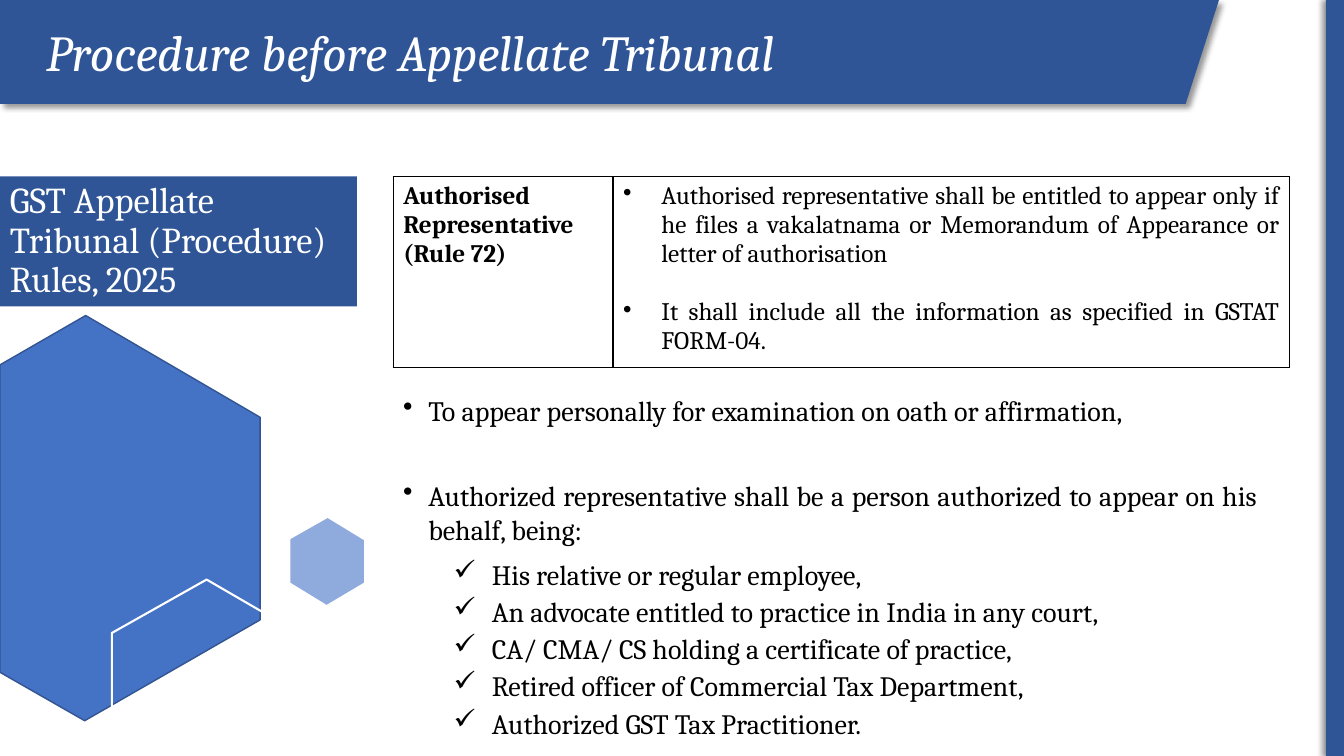
"""Build the slide on procedure before the Appellate Tribunal."""
from dataclasses import dataclass

from lxml.etree import SubElement
from pptx import Presentation
from pptx.dml.color import RGBColor
from pptx.enum.shapes import MSO_SHAPE as Preset
from pptx.enum.text import MSO_ANCHOR as Anchor, PP_ALIGN as Align
from pptx.oxml import parse_xml
from pptx.oxml.ns import nsdecls, qn
from pptx.util import Pt

SCALE = 9144


def px(length):
    return length * SCALE


@dataclass(frozen=True)
class Theme:
    font: str = "Cambria"
    navy: str = "2F5597"
    blue: str = "4472C4"
    edge: str = "325491"
    pale: str = "8FAADC"
    white: str = "FFFFFF"
    black: str = "000000"
    heading: int = 36
    title: int = 26
    body: int = 20
    cell: int = 18


def write(frame, text, *, font, size, color, bold=False, italic=False, align=Align.LEFT,
          bullet=None, left=0, hanging=0, spacing=None, before=0, after=0):
    fresh = len(frame.paragraphs) == 1 and not frame.text
    para = frame.paragraphs[0] if fresh else frame.add_paragraph()
    para.alignment = align
    para.line_spacing = spacing
    para.space_before = Pt(0 if fresh else before)
    para.space_after = Pt(after)
    if bullet:
        properties = para._p.get_or_add_pPr()
        properties.set("marL", str(px(left)))
        properties.set("indent", str(-px(hanging)))
        SubElement(properties, qn("a:buChar")).set("char", bullet)
    span = para.add_run()
    span.text = text
    span.font.name = font
    span.font.size = Pt(size)
    span.font.bold = bold
    span.font.italic = italic
    span.font.color.rgb = RGBColor.from_string(color)


@dataclass
class SlideBuilder:
    page: object
    theme: Theme

    def text(self, frame, text, **style):
        defaults = {"font": self.theme.font, "size": self.theme.body, "color": self.theme.black}
        write(frame, text, **(defaults | style))

    def paint(self, shape, fill, line, width, shadow_angle):
        shape.shadow.inherit = False
        if fill:
            shape.fill.solid()
            shape.fill.fore_color.rgb = RGBColor.from_string(fill)
        else:
            shape.fill.background()
        if line:
            shape.line.color.rgb = RGBColor.from_string(line)
            shape.line.width = Pt(width)
        else:
            shape.line.fill.background()
        if shadow_angle is not None:
            effects = shape._element.spPr.find(qn("a:effectLst"))
            effects.append(parse_xml(
                f'<a:outerShdw {nsdecls("a")} blurRad="{Pt(4)}" dist="{Pt(3)}" '
                f'dir="{shadow_angle * 60000}" algn="ctr" rotWithShape="0">'
                f'<a:srgbClr val="{self.theme.black}"><a:alpha val="40000"/></a:srgbClr>'
                '</a:outerShdw>'))
        return shape

    def polygon(self, points, fill=None, line=None, width=1, shadow_angle=None):
        outline = self.page.shapes.build_freeform(*points[0], scale=SCALE)
        outline.add_line_segments(points[1:], close=True)
        return self.paint(outline.convert_to_shape(), fill, line, width, shadow_angle)

    def rectangle(self, place, fill, shadow_angle=None):
        shape = self.page.shapes.add_shape(Preset.RECTANGLE, *map(px, place))
        return self.paint(shape, fill, None, 0, shadow_angle)

    def text_box(self, place):
        frame = self.page.shapes.add_textbox(*map(px, place)).text_frame
        frame.word_wrap = True
        return frame

    def table(self, place, widths):
        table = self.page.shapes.add_table(1, len(widths), *map(px, place)).table
        table.first_row = table.horz_banding = False
        for column, width in zip(table.columns, widths):
            column.width = px(width)
        for cell in table.iter_cells():
            cell.fill.background()
            properties = cell._tc.get_or_add_tcPr()
            for index, side in enumerate("LRTB"):
                properties.insert(index, parse_xml(
                    f'<a:ln{side} {nsdecls("a")} w="{Pt(1)}"><a:solidFill>'
                    f'<a:srgbClr val="{self.theme.black}"/></a:solidFill></a:ln{side}>'))
        return table


def main():
    deck = Presentation()
    deck.slide_width, deck.slide_height = px(1333), px(750)
    theme = Theme()
    slide = SlideBuilder(deck.slides.add_slide(deck.slide_layouts[6]), theme)

    slide.polygon([(85, 313), (258, 414), (258, 615), (84, 715), (0, 667), (0, 362)],
                  fill=theme.blue, line=theme.edge)
    slide.polygon([(205, 575), (298, 629), (298, 736), (275, 749), (134, 749), (111, 736),
                   (111, 628)], line=theme.white, width=1.5)
    slide.polygon([(325, 514), (288, 535), (288, 578), (324, 600), (361, 578), (361, 536)],
                  fill=theme.pale)
    slide.rectangle((1315, 0, 18, 750), theme.navy, shadow_angle=180)
    slide.polygon([(0, 0), (1209, 0), (1176, 103), (0, 103)], fill=theme.navy, shadow_angle=45)

    heading = slide.text_box((36, 16, 1145, 71))
    slide.text(heading, "Procedure before Appellate Tribunal",
               size=theme.heading, color=theme.white, italic=True)

    title = slide.rectangle((0, 175, 354, 129), theme.navy).text_frame
    title.word_wrap = True
    title.vertical_anchor = Anchor.MIDDLE
    slide.text(title, "GST Appellate Tribunal (Procedure) Rules, 2025",
               size=theme.title, color=theme.white, spacing=0.9)

    table = slide.table((390, 175, 889, 183), (218, 671))
    label, details = (cell.text_frame for cell in table.iter_cells())
    for line in ("Authorised Representative", "(Rule 72)"):
        slide.text(label, line, size=theme.cell, bold=True)
    for line in (
        "Authorised representative shall be entitled to appear only if he files a vakalatnama "
        "or Memorandum of Appearance or letter of authorisation",
        "It shall include all the information as specified in GSTAT FORM-04.",
    ):
        slide.text(details, line, size=theme.cell, align=Align.JUSTIFY,
                   bullet="•", left=38, hanging=38, before=21)

    body = slide.text_box((390, 385, 867, 360))
    for line in (
        "To appear personally for examination on oath or affirmation,",
        "Authorized representative shall be a person authorized to appear on his behalf, being:",
    ):
        slide.text(body, line, align=Align.JUSTIFY, bullet="•", left=25, hanging=25,
                   before=31, after=6)
    for line in (
        "His relative or regular employee,",
        "An advocate entitled to practice in India in any court,",
        "CA/ CMA/ CS holding a certificate of practice,",
        "Retired officer of Commercial Tax Department,",
        "Authorized GST Tax Practitioner.",
    ):
        slide.text(body, line, align=Align.JUSTIFY, bullet="✓", left=88, hanging=38,
                   spacing=0.9, before=5)

    deck.save("out.pptx")


if __name__ == "__main__":
    main()
